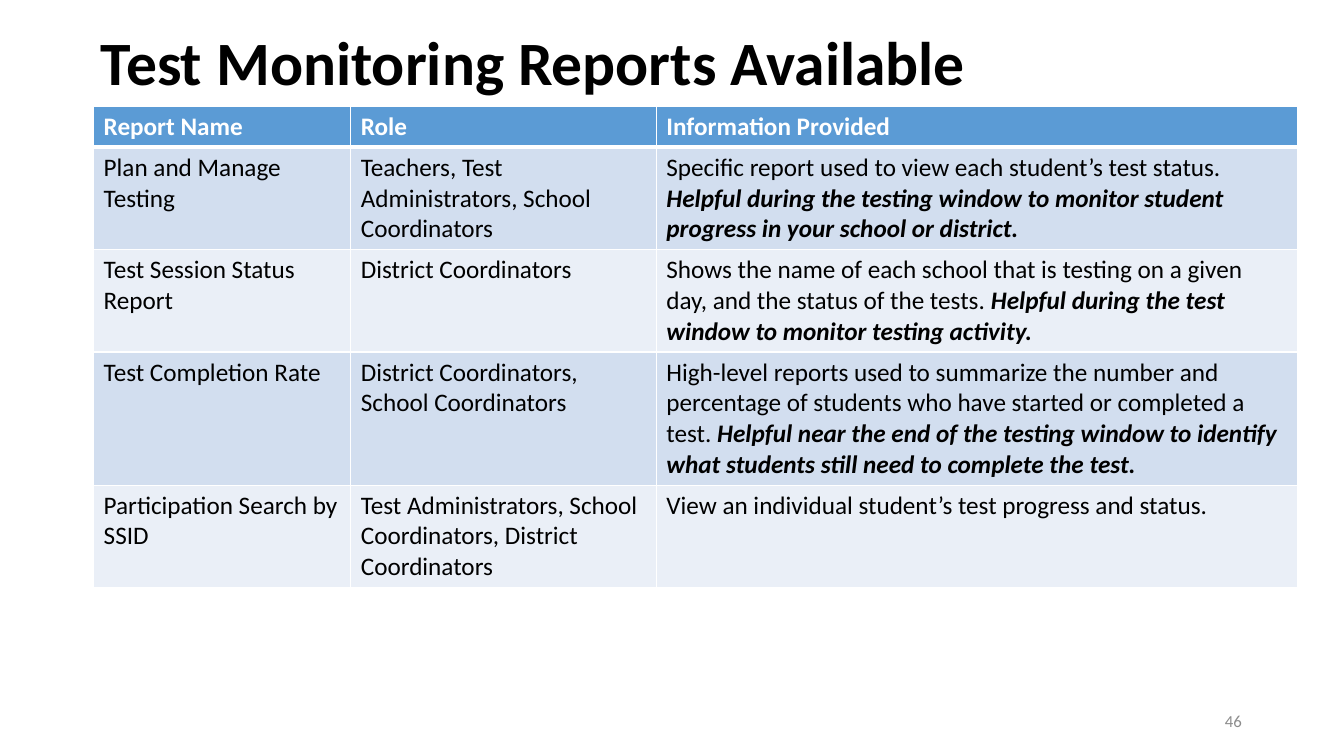
from pptx import Presentation
from pptx import util as u
from pptx.dml.color import RGBColor
from pptx.enum import text
from pptx.oxml import parse_xml
from pptx.oxml.ns import nsdecls

TITLE = "Test Monitoring Reports Available"
PAGE = "46"
HEAD = ("Report Name", "Role", "Information Provided")
ROWS = [
    ("Plan and Manage Testing",
     "Teachers, Test Administrators, School Coordinators",
     "Specific report used to view each student’s test status. ",
     "Helpful during the testing window to monitor student progress in your school or district."),
    ("Test Session Status Report",
     "District Coordinators",
     "Shows the name of each school that is testing on a given day, and the status of the tests. ",
     "Helpful during the test window to monitor testing activity."),
    ("Test Completion Rate",
     "District Coordinators, School Coordinators",
     "High-level reports used to summarize the number and percentage of students who have started or completed a test. ",
     "Helpful near the end of the testing window to identify what students still need to complete the test."),
    ("Participation Search by SSID",
     "Test Administrators, School Coordinators, District Coordinators",
     "View an individual student’s test progress and status.",
     ""),
]
WIDTHS = (6.48, 7.7, 16.15)
ROW_H = 1.04


class Theme:
    font = "Calibri"
    ink, white, gray = "000000", "FFFFFF", "8C8C8C"
    head, bands = "5B9BD5", ("D2DEEF", "EAEFF7")
    title, body, page = 44, 18, 12
    thin, thick = 1, 3


def put(item, **vals):
    for key, val in vals.items():
        setattr(item, key, val)


def add_run(para, words, size, color, **style):
    run = para.add_run()
    run.text = words
    put(run.font, name=Theme.font, size=u.Pt(size), **style)
    run.font.color.rgb = RGBColor.from_string(color)


def edge(cell, side, width):
    cell._tc.get_or_add_tcPr().append(parse_xml(
        f'<a:ln{side} {nsdecls("a")} w="{u.Pt(width)}"><a:solidFill>'
        f'<a:srgbClr val="{Theme.white}"/></a:solidFill></a:ln{side}>'))


def add_title(slide):
    box = slide.shapes.title
    put(box, left=u.Cm(2.29), top=u.Cm(0.64), width=u.Cm(29.21), height=u.Cm(2.01))
    put(box.text_frame, word_wrap=True, auto_size=text.MSO_AUTO_SIZE.NONE,
        vertical_anchor=text.MSO_ANCHOR.MIDDLE)
    para = box.text_frame.paragraphs[0]
    put(para, alignment=text.PP_ALIGN.LEFT, line_spacing=0.9)
    add_run(para, TITLE, Theme.title, Theme.ink, bold=True)


def add_grid(slide):
    count = len(ROWS) + 1
    grid = slide.shapes.add_table(count, len(HEAD), u.Cm(2.36), u.Cm(2.67),
                                  u.Cm(sum(WIDTHS)), u.Cm(ROW_H * count)).table
    for col, width in zip(grid.columns, WIDTHS):
        col.width = u.Cm(width)
    for r, (*words, tip) in enumerate([(*HEAD, ""), *ROWS]):
        grid.rows[r].height = u.Cm(ROW_H)
        top = r == 0
        fill = Theme.head if top else Theme.bands[(r - 1) % 2]
        ink = Theme.white if top else Theme.ink
        for c, word in enumerate(words):
            cell = grid.cell(r, c)
            para = cell.text_frame.paragraphs[0]
            add_run(para, word, Theme.body, ink, bold=top)
            if tip and c == len(HEAD) - 1:
                add_run(para, tip, Theme.body, ink, bold=True, italic=True)
            for side in "LRTB":
                heavy = (r, side) in ((0, "B"), (1, "T"))
                edge(cell, side, Theme.thick if heavy else Theme.thin)
            cell.fill.solid()
            cell.fill.fore_color.rgb = RGBColor.from_string(fill)


def add_page(slide):
    box = slide.shapes.add_textbox(u.Cm(23.93), u.Cm(17.65), u.Cm(7.62), u.Cm(1.02))
    put(box.text_frame, word_wrap=True, vertical_anchor=text.MSO_ANCHOR.MIDDLE)
    para = box.text_frame.paragraphs[0]
    para.alignment = text.PP_ALIGN.RIGHT
    add_run(para, PAGE, Theme.page, Theme.gray)


def main():
    deck = Presentation()
    put(deck, slide_width=u.Cm(33.87), slide_height=u.Cm(19.05))
    slide = deck.slides.add_slide(deck.slide_layouts[5])
    add_title(slide)
    add_grid(slide)
    add_page(slide)
    deck.save("out.pptx")


if __name__ == "__main__":
    main()
